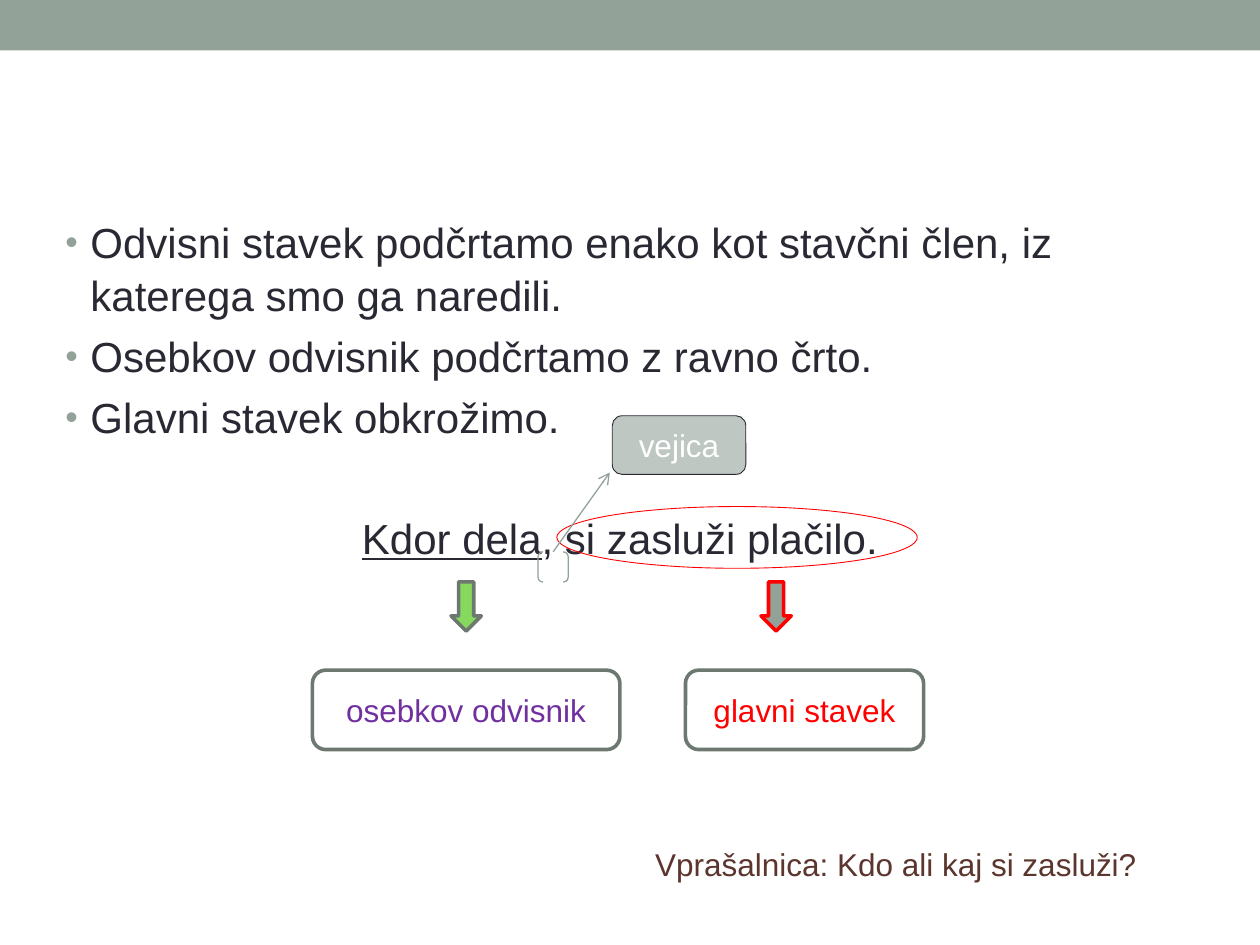
from lxml import etree
from pptx import Presentation
from pptx.dml.color import RGBColor
from pptx.enum.shapes import MSO_CONNECTOR as Connector, MSO_SHAPE as Shape
from pptx.enum.text import MSO_ANCHOR as Anchor, PP_ALIGN as Align
from pptx.oxml.ns import qn
from pptx.util import Pt

COLORS = {
    "sage": "93A299", "pale sage": "BEC7C2", "gray": "6D7871", "ink": "292934",
    "green": "87D85E", "red": "FF0000", "purple": "7030A0", "brown": "5B352E",
    "white": "FFFFFF",
}


def rgb(name):
    return RGBColor.from_string(COLORS[name])


def add_text(paragraph, text, size=18, color="ink", align=None, underline=None):
    if align is not None:
        paragraph.alignment = align
    run = paragraph.add_run()
    run.text = text
    run.font.name = "Arial"
    run.font.size = Pt(size)
    run.font.underline = underline
    run.font.color.rgb = rgb(color)


presentation = Presentation()
presentation.slide_width, presentation.slide_height = Pt(720), Pt(540)
slide = presentation.slides.add_slide(presentation.slide_layouts[6])

# Body text: three bullets and the example sentence
body = slide.shapes.add_textbox(Pt(30.24), Pt(118.8), Pt(648), Pt(383.76))
frame = body.text_frame
frame.word_wrap = True
bullets = [
    "Odvisni stavek podčrtamo enako kot stavčni člen, iz katerega smo ga naredili.",
    "Osebkov odvisnik podčrtamo z ravno črto.",
    "Glavni stavek obkrožimo.",
]
for index, text in enumerate(bullets):
    paragraph = frame.add_paragraph() if index else frame.paragraphs[0]
    paragraph.space_before = Pt(4.8)
    paragraph.line_spacing = 1.05
    add_text(paragraph, text, size=24)
    properties = paragraph._p.get_or_add_pPr()
    properties.set("marL", str(Pt(14.4)))
    properties.set("indent", str(-Pt(14.4)))
    bullet_color = etree.SubElement(properties, qn("a:buClr"))
    etree.SubElement(bullet_color, qn("a:srgbClr"), val=COLORS["sage"])
    etree.SubElement(properties, qn("a:buSzPct"), val="85000")
    etree.SubElement(properties, qn("a:buFont"), typeface="Arial")
    etree.SubElement(properties, qn("a:buChar"), char="•")

sentence = frame.add_paragraph()
sentence.space_before = Pt(38.5)
sentence.line_spacing = 1.05
add_text(sentence, "Kdor dela", size=24, align=Align.CENTER, underline=True)
add_text(sentence, ", si zasluži plačilo.", size=24)

# kind, left, top, width, height, fill, line, line width, label, label color
shapes = [
    (Shape.RECTANGLE, 0, 0, 720, 28.8, "sage", None, 0, "", None),
    (Shape.DOWN_ARROW, 257.76, 332.5, 17.28, 28.08, "green", "gray", 2.08, "", None),
    (Shape.DOWN_ARROW, 434.88, 332.5, 17.28, 28.08, "sage", "red", 2.08, "", None),
    (Shape.DOUBLE_BRACKET, 307.44, 315.36, 17.28, 17.28, None, "sage", 0.75, "", None),
    (Shape.OVAL, 318.24, 289.44, 205.92, 35.28, None, "red", 0.5, "", None),
    (Shape.ROUNDED_RECTANGLE, 349.92, 237.6, 76.32, 33.5,
     "pale sage", "ink", 0.5, "vejica", "white"),
    (Shape.ROUNDED_RECTANGLE, 178.56, 383, 175.68, 45.36,
     None, "gray", 2.08, "osebkov odvisnik", "purple"),
    (Shape.ROUNDED_RECTANGLE, 391.68, 383, 136.08, 45.36,
     None, "gray", 2.08, "glavni stavek", "red"),
    (Shape.ROUNDED_RECTANGLE, 329.76, 446, 364.32, 95.76,
     None, "white", 2.08, "Vprašalnica: Kdo ali kaj si zasluži?", "brown"),
]
for kind, left, top, width, height, fill, line, line_width, label, label_color in shapes:
    shape = slide.shapes.add_shape(kind, Pt(left), Pt(top), Pt(width), Pt(height))
    shape.shadow.inherit = False
    if fill:
        shape.fill.solid()
        shape.fill.fore_color.rgb = rgb(fill)
    else:
        shape.fill.background()
    if line:
        shape.line.color.rgb = rgb(line)
        shape.line.width = Pt(line_width)
    else:
        shape.line.fill.background()
    if label:
        shape.text_frame.word_wrap = True
        shape.text_frame.vertical_anchor = Anchor.MIDDLE
        add_text(shape.text_frame.paragraphs[0], label,
                 color=label_color, align=Align.CENTER)
    if kind == Shape.DOUBLE_BRACKET:
        comma_bracket = shape

# Arrow from the comma to its label
pointer = slide.shapes.add_connector(
    Connector.STRAIGHT, Pt(316.08), Pt(315.36), Pt(348.48), Pt(270))
pointer.begin_connect(comma_bracket, 0)
pointer.line.color.rgb = rgb("sage")
pointer.line.width = Pt(0.75)
etree.SubElement(pointer.line._get_or_add_ln(), qn("a:tailEnd"), type="arrow")
etree.SubElement(pointer._element.spPr, qn("a:effectLst"))

presentation.save("out.pptx")
